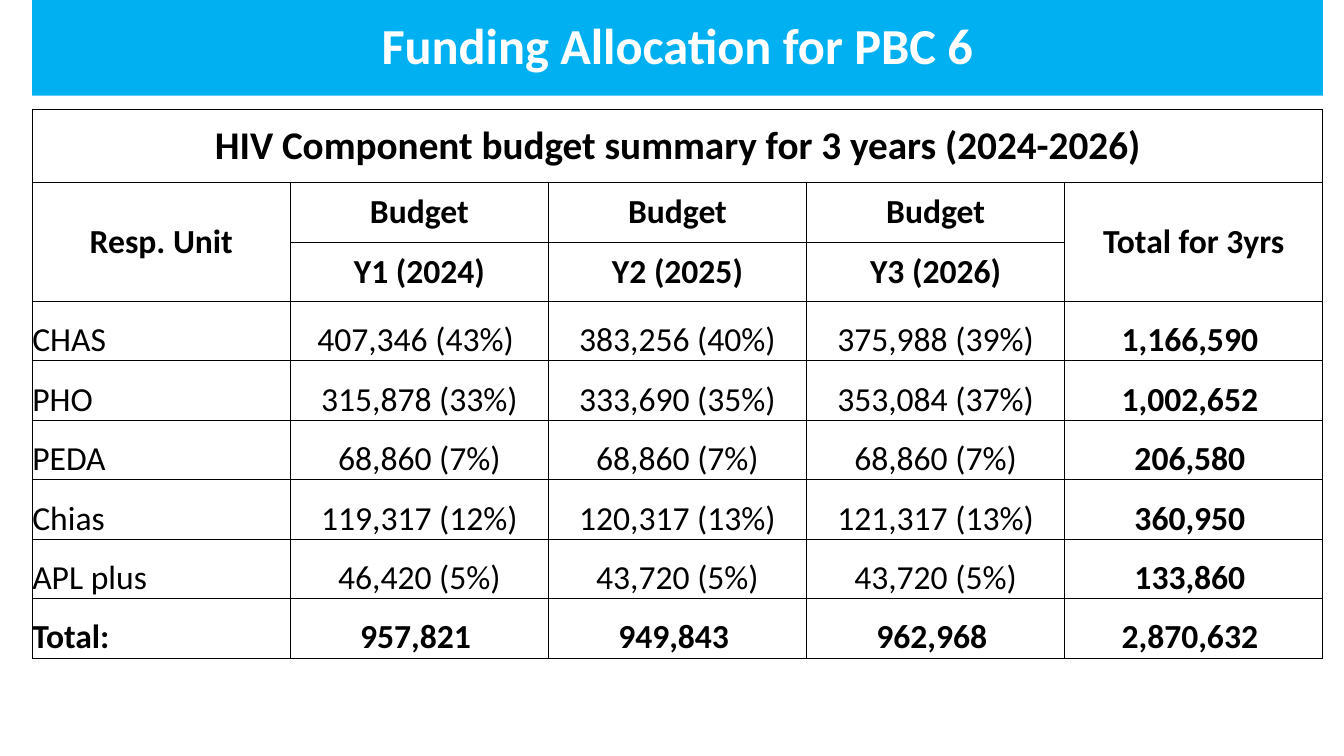
from lxml import etree
from pptx import Presentation
from pptx import util as u
from pptx.dml.color import RGBColor
from pptx.enum import shapes, text
from pptx.oxml import ns

PX = 9144
BLACK = RGBColor(0x00, 0x00, 0x00)
WHITE = RGBColor(0xFF, 0xFF, 0xFF)
SKY = RGBColor(0x00, 0xB0, 0xF0)

LEFT, WIDTH = 32, 1280
TABLE_TOP, HEADING_HEIGHT, ROW_HEIGHT = 108, 73, 59
HEADER_ROWS = 3
ROWS = [
    ["HIV Component budget summary for 3 years (2024-2026)", "", "", "", ""],
    ["Resp. Unit", "Budget", "Budget", "Budget", "Total for 3yrs"],
    ["", "Y1 (2024)", "Y2 (2025)", "Y3 (2026)", ""],
    ["CHAS", "407,346 (43%) ", "383,256 (40%)", "375,988 (39%)", "1,166,590 "],
    ["PHO", "315,878 (33%)", "333,690 (35%)", "353,084 (37%)", "1,002,652 "],
    ["PEDA", "68,860 (7%)", "68,860 (7%)", "68,860 (7%)", "206,580 "],
    ["Chias", "119,317 (12%)", "120,317 (13%)", "121,317 (13%)", "360,950 "],
    ["APL plus", "46,420 (5%)", "43,720 (5%)", "43,720 (5%)", "133,860 "],
    ["Total:", "957,821 ", "949,843 ", "962,968 ", "2,870,632 "],
]
LAST_ROW, LAST_COLUMN = len(ROWS) - 1, len(ROWS[0]) - 1


def write(frame, wording, size, color, bold, align):
    frame.text = wording
    para = frame.paragraphs[0]
    para.alignment = align
    para.font.size = u.Pt(size)
    for span in para.runs:
        span.font.name = "Calibri"
        span.font.size = u.Pt(size)
        span.font.bold = bold
        span.font.color.rgb = color
    return para


def add_borders(cell):
    properties = cell._tc.get_or_add_tcPr()
    for position, side in enumerate(("lnL", "lnR", "lnT", "lnB")):
        line = etree.Element(ns.qn(f"a:{side}"), w=str(u.Pt(0.5)))
        fill = etree.SubElement(line, ns.qn("a:solidFill"))
        etree.SubElement(fill, ns.qn("a:srgbClr"), val=str(BLACK))
        properties.insert(position, line)


deck = Presentation()
deck.slide_width = 1333 * PX
deck.slide_height = 750 * PX
page = deck.slides.add_slide(deck.slide_layouts[6])

table_height = HEADING_HEIGHT + LAST_ROW * ROW_HEIGHT
budget = page.shapes.add_table(
    len(ROWS), len(ROWS[0]), LEFT * PX, TABLE_TOP * PX, WIDTH * PX, table_height * PX
).table
budget.first_row = False
budget.horz_banding = False
for column in budget.columns:
    column.width = WIDTH // len(ROWS[0]) * PX

for r, wordings in enumerate(ROWS):
    header = r < HEADER_ROWS
    budget.rows[r].height = (ROW_HEIGHT if r else HEADING_HEIGHT) * PX
    for c, wording in enumerate(wordings):
        cell = budget.cell(r, c)
        cell.margin_left = cell.margin_right = cell.margin_top = cell.margin_bottom = 0
        cell.vertical_anchor = text.MSO_ANCHOR.MIDDLE if header else text.MSO_ANCHOR.BOTTOM
        cell.fill.background()
        add_borders(cell)
        bold = header or r == LAST_ROW or c == LAST_COLUMN
        align = text.PP_ALIGN.CENTER if header or c else text.PP_ALIGN.LEFT
        write(cell.text_frame, wording, 24 if r else 28, BLACK, bold, align)

budget.cell(0, 0).merge(budget.cell(0, LAST_COLUMN))
for c in (0, LAST_COLUMN):
    budget.cell(1, c).merge(budget.cell(2, c))

banner = page.shapes.add_shape(
    shapes.MSO_SHAPE.RECTANGLE, LEFT * PX, 0, WIDTH * PX, 95 * PX
)
banner.shadow.inherit = False
banner.fill.solid()
banner.fill.fore_color.rgb = SKY
banner.line.fill.background()
banner.text_frame.word_wrap = True
banner.text_frame.vertical_anchor = text.MSO_ANCHOR.MIDDLE
title = write(
    banner.text_frame, "Funding Allocation for PBC 6", 36, WHITE, True, text.PP_ALIGN.CENTER
)
title.line_spacing = 0.9

deck.save("out.pptx")
